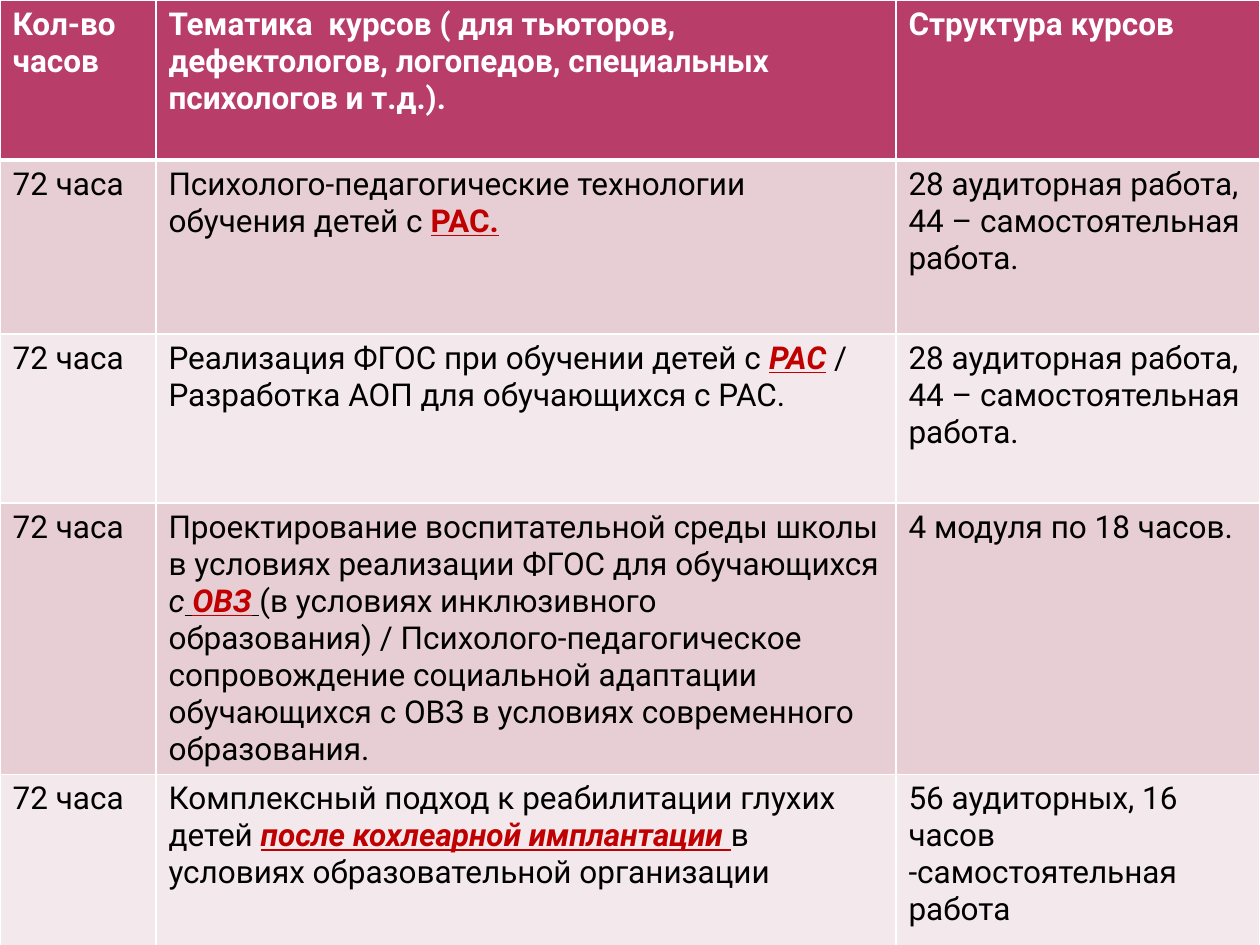
"""Build a slide with a table of training courses, their hours and structure."""
import pptx
import pptx.dml.color
import pptx.oxml
import pptx.oxml.ns
import pptx.util

RGB = pptx.dml.color.RGBColor
WHITE = RGB(0xFF, 0xFF, 0xFF)
BLACK = RGB(0, 0, 0)
RED = RGB(0xC0, 0, 0)
PLUM = RGB(0xB8, 0x3D, 0x68)
BANDS = [RGB(0xE6, 0xCE, 0xD4), RGB(0xF3, 0xE8, 0xEB)]

PX = 914400 // 126
COLS = [156, 740, 364]
ROWS = [160, 174, 169, 270, 172]

HEAD = {"color": WHITE, "bold": True}
KEY = {"color": RED, "bold": True, "under": True}
SLANT = {**KEY, "slant": True}

HOURS = "72 часа"
SPLIT = "28 аудиторная работа, 44 – самостоятельная работа."
TITLES = [
    "Кол-во часов",
    "Тематика  курсов ( для тьюторов, дефектологов, логопедов, "
    "специальных психологов и т.д.).",
    "Структура курсов",
]
COURSES = [
    ([("Психолого-педагогические технологии обучения детей с ", {}),
      ("РАС.", KEY)], SPLIT),
    ([("Реализация ФГОС при обучении детей с ", {}),
      ("РАС", SLANT),
      (" ", {"color": RED, "bold": True}),
      ("/ Разработка АОП для обучающихся с РАС.", {})], SPLIT),
    ([("Проектирование воспитательной среды школы в условиях реализации "
       "ФГОС для обучающихся ", {}),
      ("с", {"slant": True}),
      (" ", {"slant": True, "under": True}),
      ("ОВЗ", SLANT),
      (" ", {"slant": True, "under": True}),
      ("(в условиях инклюзивного образования) / Психолого-педагогическое "
       "сопровождение социальной адаптации обучающихся с ОВЗ в условиях "
       "современного образования.", {})], "4 модуля по 18 часов."),
    ([("Комплексный подход к реабилитации глухих детей ", {}),
      ("после кохлеарной имплантации ", SLANT),
      ("в условиях образовательной организации", {})],
     "56 аудиторных, 16 часов -самостоятельная работа"),
]


def write(para, text, color=BLACK, bold=False, slant=False, under=False):
    run = para.add_run()
    run.text = text
    font = run.font
    font.name, font.size = "Roboto", pptx.util.Pt(18)
    font.bold, font.italic, font.underline = bold, slant, under
    font.color.rgb = color


def edge(cell, side, width):
    props = cell._tc.get_or_add_tcPr()
    props.append(pptx.oxml.parse_xml(
        f'<a:{side} {pptx.oxml.ns.nsdecls("a")} w="{pptx.util.Pt(width)}">'
        f'<a:solidFill><a:srgbClr val="{WHITE}"/></a:solidFill></a:{side}>'))


def main():
    deck = pptx.Presentation()
    deck.slide_width, deck.slide_height = 1260 * PX, 945 * PX
    slide = deck.slides.add_slide(deck.slide_layouts[6])
    table = slide.shapes.add_table(
        len(ROWS), len(COLS), 0, 0, sum(COLS) * PX, sum(ROWS) * PX).table
    for col, width in zip(table.columns, COLS):
        col.width = width * PX
    for row, height in zip(table.rows, ROWS):
        row.height = height * PX

    grid = [[[(text, HEAD)] for text in TITLES]]
    grid += [[[(HOURS, {})], topic, [(plan, {})]] for topic, plan in COURSES]
    for r, line in enumerate(grid):
        for c, runs in enumerate(line):
            cell = table.cell(r, c)
            edge(cell, "lnL", 1)
            edge(cell, "lnR", 1)
            edge(cell, "lnT", 3 if r == 1 else 1)
            edge(cell, "lnB", 3 if r == 0 else 1)
            cell.fill.solid()
            cell.fill.fore_color.rgb = BANDS[(r - 1) % 2] if r else PLUM
            for text, form in runs:
                write(cell.text_frame.paragraphs[0], text, **form)
    deck.save("out.pptx")


if __name__ == "__main__":
    main()
